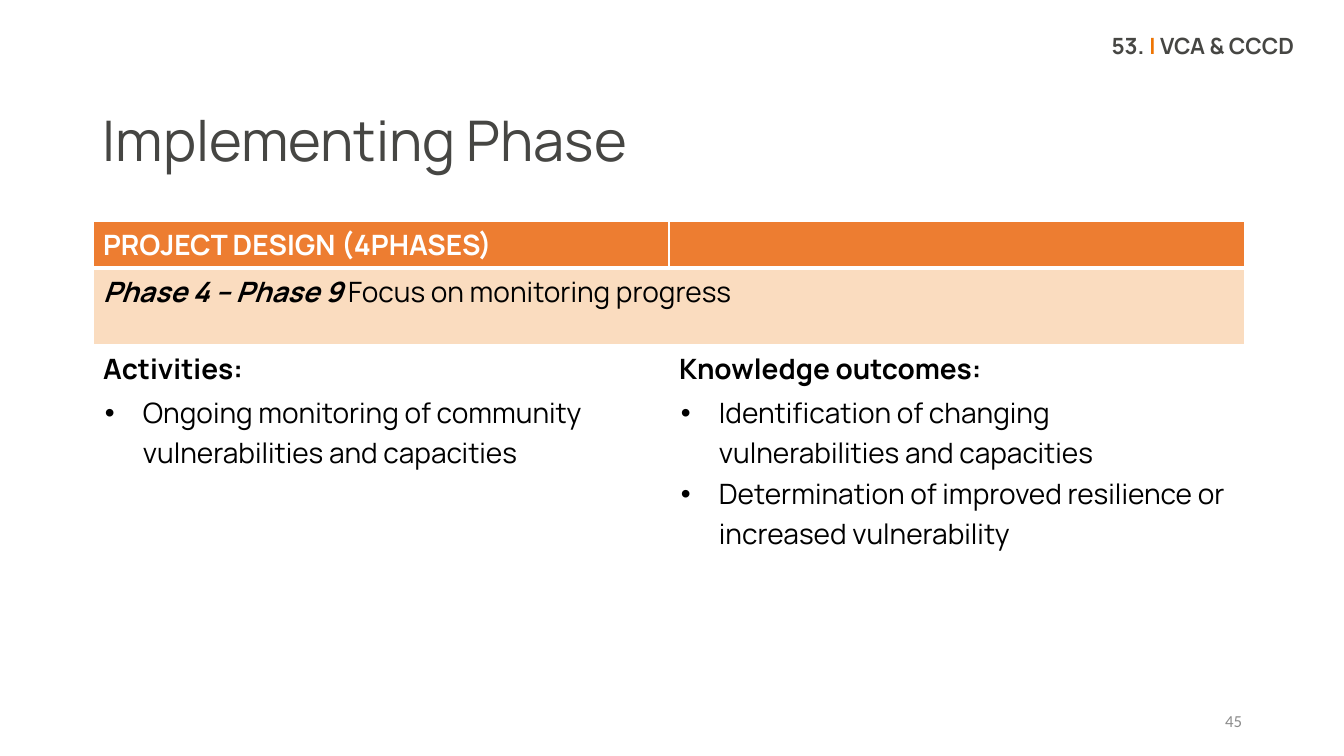
from lxml.etree import SubElement
from pptx import Presentation
from pptx.dml.color import RGBColor
from pptx.enum.text import MSO_ANCHOR, PP_ALIGN
from pptx.oxml.ns import qn
from pptx.util import Emu, Pt

PX = 9071  # EMU in one px, at 100.8 px to the inch
COLORS = {"white": "FFFFFF", "black": "000000", "text": "464643", "accent": "EE7402",
          "header": "ED7D31", "number": "8C8C8C"}
FONT = "Manrope"
BORDERS = {"a:lnL": 1, "a:lnR": 1, "a:lnT": 1, "a:lnB": 1}
ROW_HEIGHTS = (47, 77, 46, 196)
COLUMNS = (
    ("Activities:", ["Ongoing monitoring of community vulnerabilities and capacities"]),
    ("Knowledge outcomes:", ["Identification of changing vulnerabilities and capacities",
                             "Determination of improved resilience or increased vulnerability"]),
)


def px(length):
    return Emu(length * PX)


def add_run(paragraph, text, size, color, bold=False, italic=False, font=FONT):
    run = paragraph.add_run()
    run.text = text
    run.font.name = font
    run.font.size = Pt(size)
    run.font.bold = bold
    run.font.italic = italic
    run.font.color.rgb = RGBColor.from_string(COLORS[color])


def add_text(slide, box, runs, align=PP_ALIGN.LEFT, anchor=MSO_ANCHOR.TOP, spacing=None):
    """Add a one-paragraph text box; each run is a tuple of add_run arguments."""
    frame = slide.shapes.add_textbox(*map(px, box)).text_frame
    frame.word_wrap = True
    frame.vertical_anchor = anchor
    paragraph = frame.paragraphs[0]
    paragraph.alignment = align
    paragraph.line_spacing = spacing
    for run in runs:
        add_run(paragraph, *run)


def style_cell(cell, fill=None, alpha=None, bottom=1):
    """Give the cell white borders and a fill, with alpha in percent."""
    properties = cell._tc.get_or_add_tcPr()
    for tag, width in {**BORDERS, "a:lnB": bottom}.items():
        line = SubElement(properties, qn(tag), w=str(Pt(width)))
        SubElement(SubElement(line, qn("a:solidFill")), qn("a:srgbClr"), val=COLORS["white"])
    if fill is None:
        cell.fill.background()
        return
    cell.fill.solid()
    cell.fill.fore_color.rgb = RGBColor.from_string(COLORS[fill])
    if alpha:
        color = properties.find(qn("a:solidFill")).find(qn("a:srgbClr"))
        SubElement(color, qn("a:alpha"), val=str(alpha * 1000))


def fill_bullets(cell, items):
    cell.margin_left = cell.margin_right = px(12)
    cell.margin_top = cell.margin_bottom = 0
    frame = cell.text_frame
    for index, item in enumerate(items):
        paragraph = frame.add_paragraph() if index else frame.paragraphs[0]
        properties = paragraph._p.get_or_add_pPr()
        properties.set("marL", str(px(38)))
        properties.set("indent", str(px(-38)))
        SubElement(properties, qn("a:buFont"), typeface="Arial")
        SubElement(properties, qn("a:buChar"), char="•")
        paragraph.line_spacing = 1.06
        paragraph.space_after = Pt(8 if index == len(items) - 1 else 0)
        add_run(paragraph, item, 20, "black")


def add_phase_table(slide, left, top, width):
    shape = slide.shapes.add_table(len(ROW_HEIGHTS), len(COLUMNS), px(left), px(top),
                                   px(width), px(sum(ROW_HEIGHTS)))
    table = shape.table
    for row, height in zip(table.rows, ROW_HEIGHTS):
        row.height = px(height)

    for index, (heading, items) in enumerate(COLUMNS):
        header, phase, title, bullets = (table.cell(row, index) for row in range(4))
        style_cell(header, "header", bottom=3)
        style_cell(phase, "accent", alpha=25)
        style_cell(title)
        style_cell(bullets)
        add_run(title.text_frame.paragraphs[0], heading, 20, "black", True)
        fill_bullets(bullets, items)

    add_run(table.cell(0, 0).text_frame.paragraphs[0], "PROJECT DESIGN (4PHASES)",
            20, "white", True)
    phase = table.cell(1, 0)
    phase.merge(table.cell(1, 1))
    paragraph = phase.text_frame.paragraphs[0]
    add_run(paragraph, "Phase 4 – Phase 9 ", 20, "black", True, True)
    add_run(paragraph, "Focus on monitoring progress", 20, "black")


def build_phase_slide(presentation):
    slide = presentation.slides.add_slide(presentation.slide_layouts[6])
    add_text(slide, (93, 108, 984, 73), [("Implementing Phase", 40, "text")], spacing=0.9)
    add_phase_table(slide, 93, 221, 1152)
    add_text(slide, (804, 30, 500, 110),
             [("53. ", 16, "text", True), ("| ", 16, "accent", True),
              ("VCA & CCCD", 16, "text", True)],
             align=PP_ALIGN.RIGHT, spacing=0.9)
    add_text(slide, (950, 701, 302, 40), [("45", 12, "number", False, False, "Calibri")],
             align=PP_ALIGN.RIGHT, anchor=MSO_ANCHOR.MIDDLE)


def main():
    presentation = Presentation()
    presentation.slide_width = px(1344)
    presentation.slide_height = px(756)
    build_phase_slide(presentation)
    presentation.save("out.pptx")


if __name__ == "__main__":
    main()
